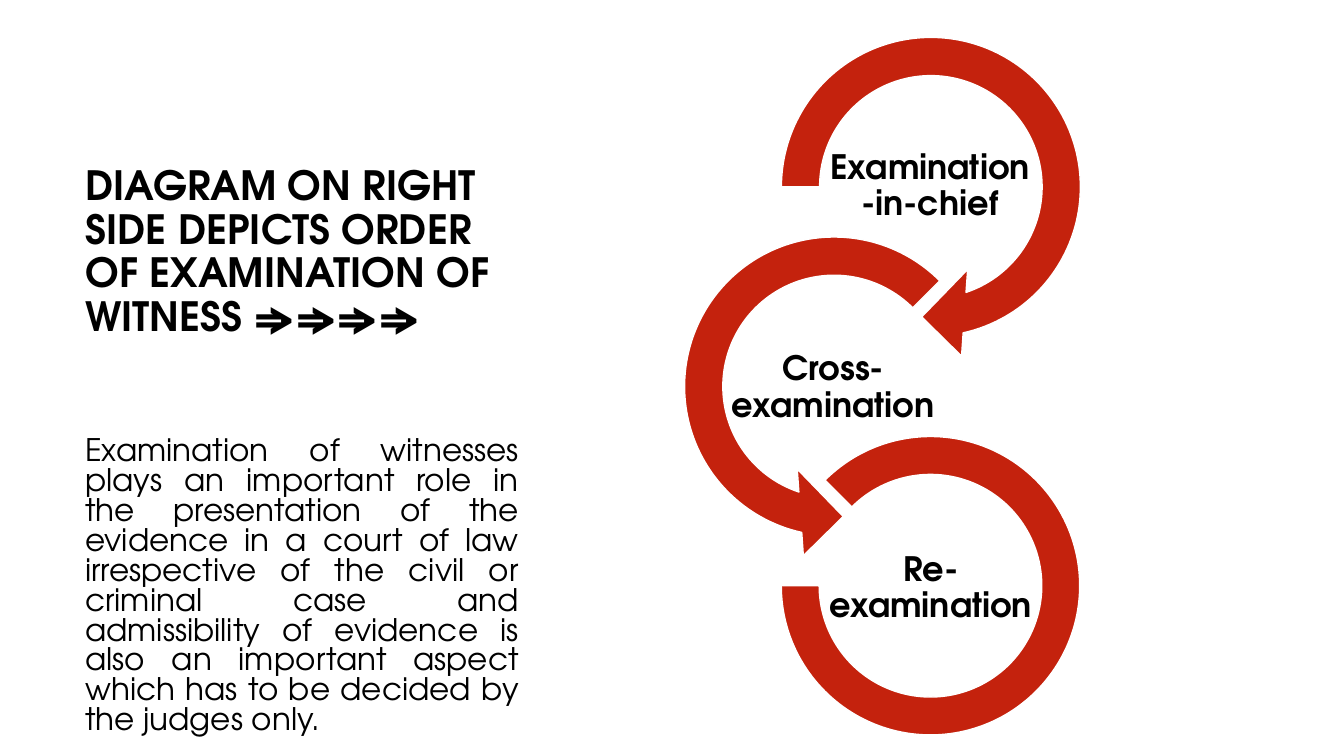
import pptx
import pptx.util
import pptx.dml.color
import pptx.enum.shapes
import pptx.enum.text

Cm, Pt = pptx.util.Cm, pptx.util.Pt
SHAPE = pptx.enum.shapes.MSO_SHAPE
ALIGN = pptx.enum.text.PP_ALIGN
ANCHOR = pptx.enum.text.MSO_ANCHOR


def rgb(value):
    return pptx.dml.color.RGBColor.from_string(value)


def add_text(box, text, size, bold, align, anchor, spacing):
    """Add a wrapped one-paragraph text box and return its text frame."""
    tf = s.shapes.add_textbox(*map(Cm, box)).text_frame
    tf.word_wrap = True
    tf.vertical_anchor = anchor
    p = tf.paragraphs[0]
    p.text = text
    p.alignment = align
    p.line_spacing = spacing
    p.font.name = "TeX Gyre Adventor"
    p.font.size = Pt(size)
    p.font.bold = bold
    p.font.color.rgb = rgb("000000")
    return tf


prs = pptx.Presentation()
prs.slide_width = Cm(33.87)
prs.slide_height = Cm(19.05)
s = prs.slides.add_slide(prs.slide_layouts[6])

add_text((1.9, 4.24, 11.43, 4.45),
         "DIAGRAM ON RIGHT SIDE DEPICTS ORDER OF EXAMINATION OF WITNESS ⇒⇒⇒⇒",
         28.8, True, ALIGN.LEFT, ANCHOR.BOTTOM, 0.9)

# Stages: preset, left, top, size, adjustments, label, label box
stages = [
    (SHAPE.CIRCULAR_ARROW, 19.08, 0.33, 8.76, (0.11, 11.42, 45, 108, 0.125),
     "Examination-in-chief", (20.75, 3.48, 5.38, 2.44)),
    (SHAPE.LEFT_CIRCULAR_ARROW, 16.64, 5.36, 8.76, (0.11, 11.42, 63, 189, 0.125),
     "Cross-examination", (18.08, 8.56, 5.84, 2.44)),
    (SHAPE.BLOCK_ARC, 19.69, 11, 7.52, (135, 108, 0.127),
     "Re-examination", (20.57, 13.61, 5.77, 2.44)),
]
for preset, left, top, size, adjustments, label, label_box in stages:
    sp = s.shapes.add_shape(preset, Cm(left), Cm(top), Cm(size), Cm(size))
    sp.shadow.inherit = False
    sp.fill.solid()
    sp.fill.fore_color.rgb = rgb("C4220D")
    sp.line.color.rgb = rgb("FFFFFF")
    sp.line.width = Pt(1)
    for i, value in enumerate(adjustments):
        sp.adjustments[i] = value
    tf = add_text(label_box, label, 24, True, ALIGN.CENTER, ANCHOR.MIDDLE, 0.9)
    tf.margin_left = tf.margin_right = tf.margin_top = tf.margin_bottom = Cm(0.05)
    tf.paragraphs[0].space_after = Pt(8.4)

tf = add_text((1.9, 8.69, 11.43, 10.36),
              "Examination of witnesses plays an important role in the presentation "
              "of the evidence in a court of law irrespective of the civil or criminal "
              "case and admissibility of evidence is also an important aspect which "
              "has to be decided by the judges only.",
              22.2, False, ALIGN.JUSTIFY, ANCHOR.TOP, 0.8)
tf.margin_top = Cm(2.35)

prs.save("out.pptx")
